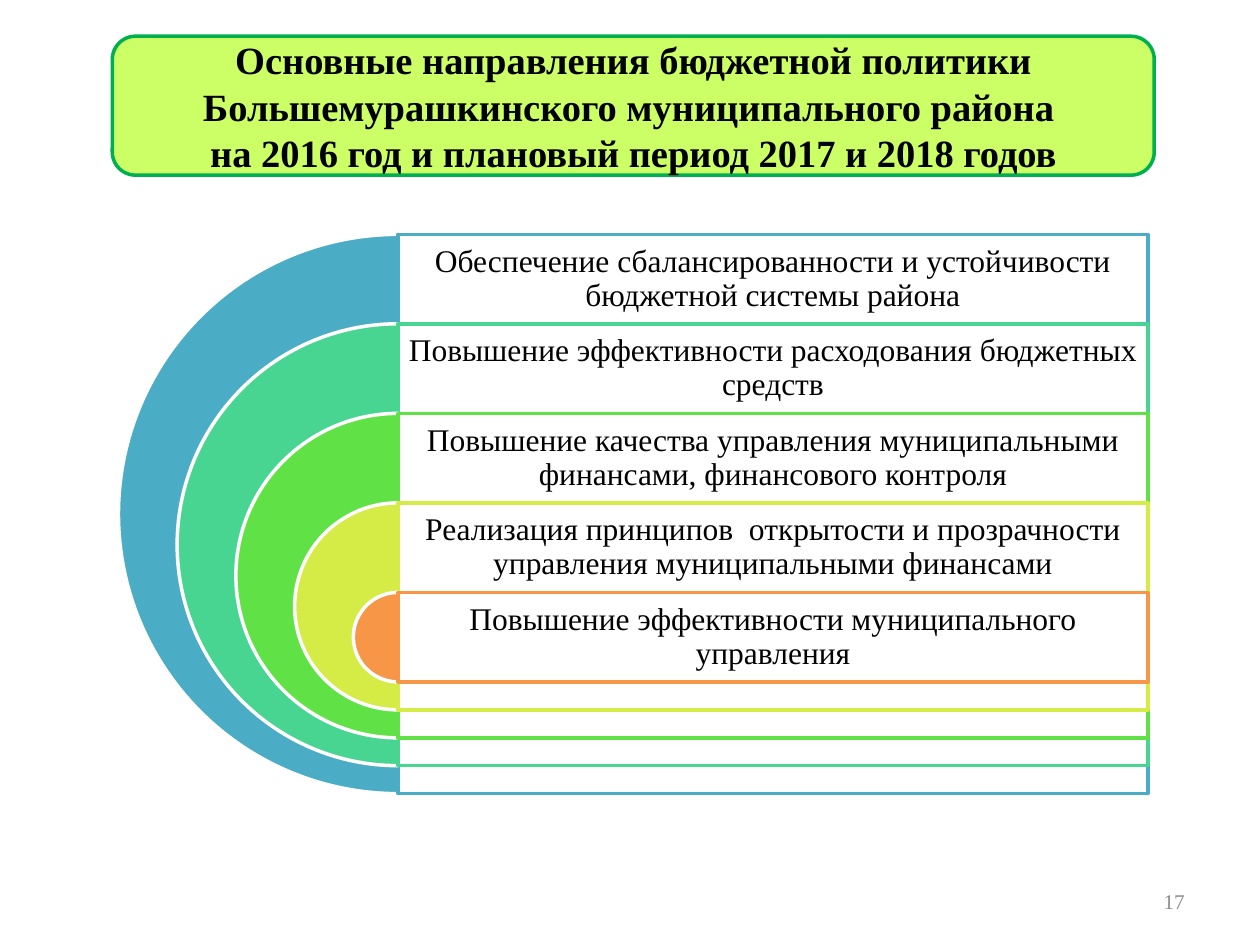
import pptx
import pptx.util
import pptx.dml.color
import pptx.enum.shapes
import pptx.enum.text
import pptx.oxml.ns
import lxml.etree

Pt = pptx.util.Pt
RGB = pptx.dml.color.RGBColor.from_string
KIND = pptx.enum.shapes.MSO_SHAPE
ALIGN = pptx.enum.text.PP_ALIGN
MIDDLE = pptx.enum.text.MSO_ANCHOR.MIDDLE

THEME = {
    "font": "Times New Roman",
    "ink": "000000", "paper": "FFFFFF", "muted": "8C8C8C",
    "lime": "CCFF66", "green": "00B050",
    "title": 22, "body": 18, "page": 12,
    "rings": ["4BACC6", "48D491", "60E146", "D5EC46", "F79646"],
}


def draw(shapes, kind, box, fill, line):
    shape = shapes.add_shape(kind, *map(Pt, box))
    shape.shadow.inherit = False
    shape.fill.solid()
    shape.fill.fore_color.rgb = RGB(fill)
    shape.line.color.rgb = RGB(line)
    shape.line.width = Pt(2)
    return shape


def write(shape, lines, size, color="ink", bold=False, frame={}, para={}):
    text = shape.text_frame
    text.text = "\n".join(lines)
    for key, value in {"word_wrap": True, "vertical_anchor": MIDDLE, **frame}.items():
        setattr(text, key, value)
    look = {"name": THEME["font"], "size": Pt(THEME[size]), "bold": bold}
    for item in text.paragraphs:
        for key, value in {"alignment": ALIGN.CENTER, **para}.items():
            setattr(item, key, value)
        for key, value in look.items():
            setattr(item.runs[0].font, key, value)
        item.runs[0].font.color.rgb = RGB(THEME[color])


deck = pptx.Presentation()
deck.slide_width, deck.slide_height = Pt(720), Pt(540)
slide = deck.slides.add_slide(deck.slide_layouts[6])

title = draw(slide.shapes, KIND.ROUNDED_RECTANGLE, (64.2, 20.7, 595.4, 79.4),
             THEME["lime"], THEME["green"])
write(title, [
    "Основные направления бюджетной политики Большемурашкинского муниципального района ",
    "на 2016 год и плановый период 2017 и 2018 годов",
], "title", bold=True)

page = slide.shapes.add_textbox(*map(Pt, (516, 500.5, 168, 28.8)))
write(page, ["17"], "page", "muted", para={"alignment": ALIGN.RIGHT})

goals = [
    "Обеспечение сбалансированности и устойчивости бюджетной системы района",
    "Повышение эффективности расходования бюджетных средств",
    "Повышение качества управления муниципальными финансами, финансового контроля",
    "Реализация принципов  открытости и прозрачности управления муниципальными финансами",
    "Повышение эффективности муниципального управления",
]
left, top, width = 227.5, 133.9, 428.4
row, outer, shrink = 51.15, 319.6, 67.1
inset = {"margin_" + side: Pt(5) for side in ("left", "top", "right", "bottom")}
group = slide.shapes.add_group_shape().shapes

for i, (goal, color) in enumerate(zip(goals, THEME["rings"])):
    y = top + i * row
    size = outer - i * shrink
    pie = draw(group, KIND.PIE, (left - size / 2, y, size, size), color, THEME["paper"])
    pie.adjustments[0], pie.adjustments[1] = 54, 162
    panel = draw(group, KIND.RECTANGLE, (left, y, width, size), THEME["paper"], color)
    tint = panel.fill._xPr.find(".//" + pptx.oxml.ns.qn("a:srgbClr"))
    lxml.etree.SubElement(tint, pptx.oxml.ns.qn("a:alpha"), val="90000")
    label = group.add_textbox(*map(Pt, (left, y, width, row)))
    write(label, [goal], "body", frame=inset, para={"line_spacing": 0.9})

deck.save("out.pptx")
